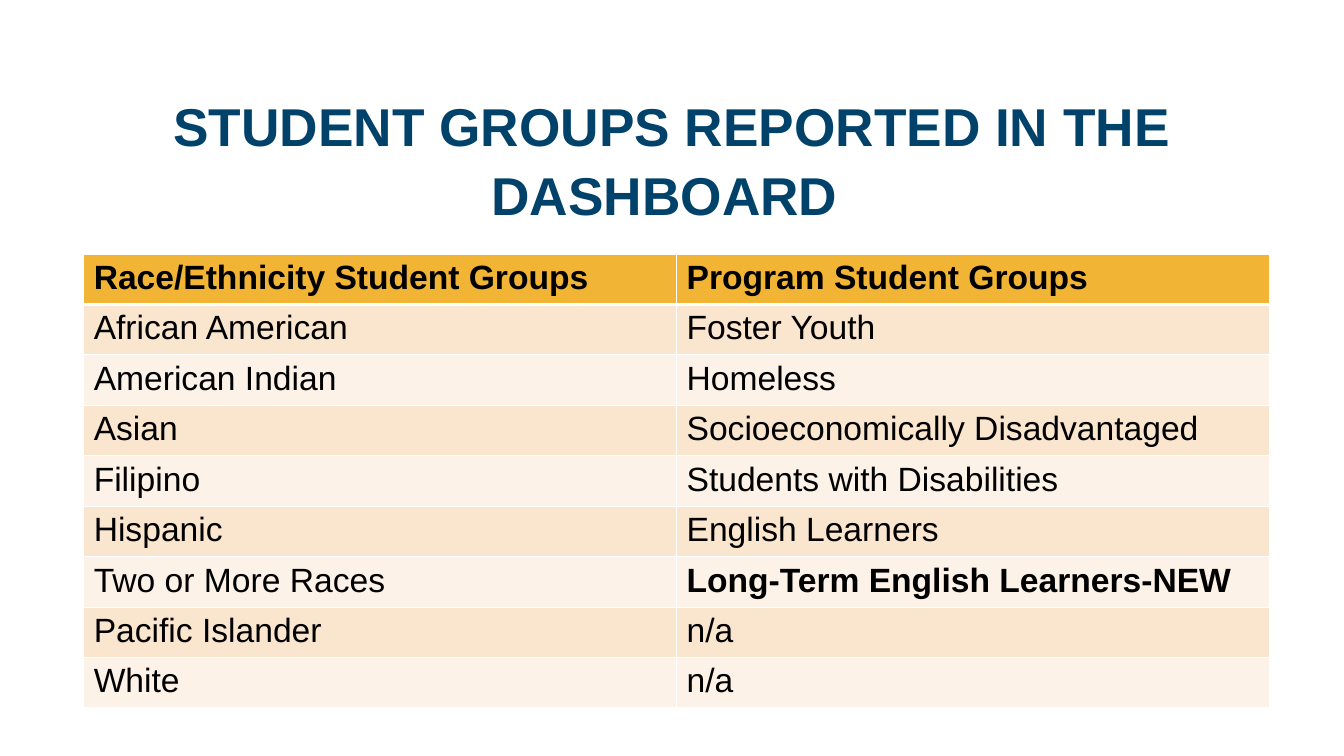
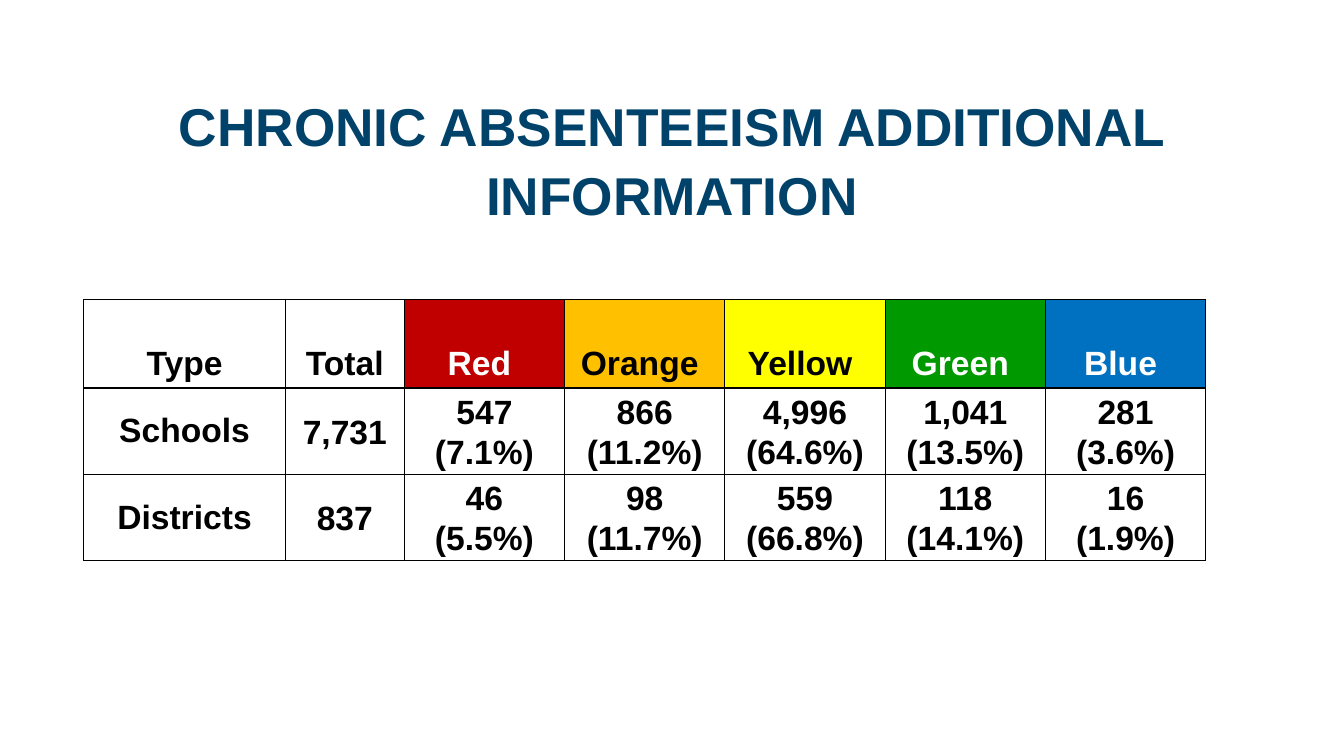
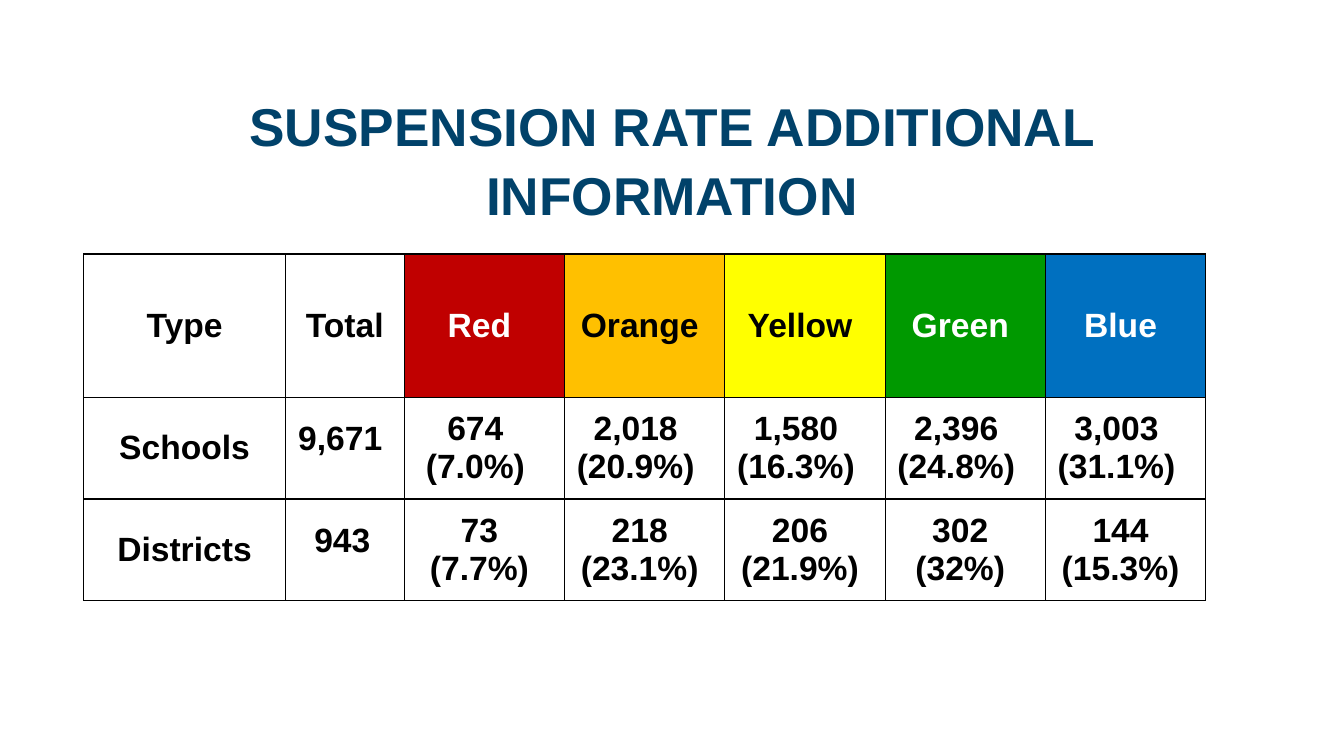
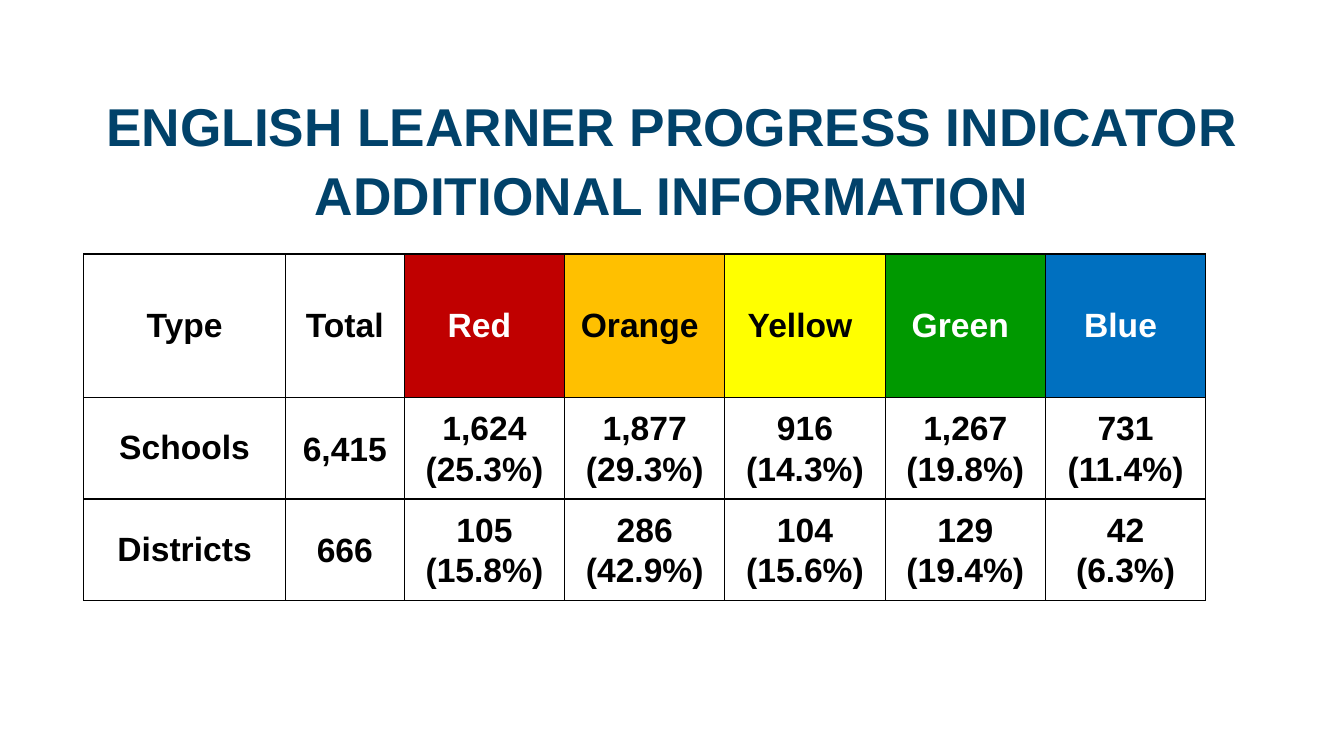
from dataclasses import dataclass

from lxml import etree
from pptx import Presentation
from pptx import util as u
from pptx.dml import color as dml
from pptx.enum import text as tx
from pptx.oxml import ns

MID = tx.MSO_ANCHOR.MIDDLE
LOW = tx.MSO_ANCHOR.BOTTOM
LEFT = tx.PP_ALIGN.LEFT
MAIN = tx.PP_ALIGN.CENTER


@dataclass(frozen=True)
class Theme:
    font: str = "Arial"
    head: float = 38
    body: float = 24
    lead: float = 48.8
    navy: str = "01426A"
    black: str = "000000"
    white: str = "FFFFFF"
    gold: str = "F1B434"
    bands: tuple[str, str] = ("FAE5CE", "FCF2E8")


@dataclass(frozen=True)
class Level:
    name: str
    fill: str
    ink: str


@dataclass(frozen=True)
class Rating:
    title: str
    top: float
    rows: tuple[float, float, float]
    data: tuple[tuple[str, ...], tuple[str, ...]]
    anchor: tx.MSO_ANCHOR = MID
    shifts: tuple[float, float] = (0, 0)
    edge: float = 0
    lead: float | None = 1.07
    total: float | u.Length = 1.07


T = Theme()
X = 0.83

LEVELS = (
    Level("Red", "C00000", T.white),
    Level("Orange", "FFC000", T.black),
    Level("Yellow", "FFFF00", T.black),
    Level("Green", "009900", T.white),
    Level("Blue", "0070C0", T.white),
)

GROUPS = (
    ("Race/Ethnicity Student Groups", "Program Student Groups"),
    ("African American", "Foster Youth"),
    ("American Indian", "Homeless"),
    ("Asian", "Socioeconomically Disadvantaged"),
    ("Filipino", "Students with Disabilities"),
    ("Hispanic", "English Learners"),
    ("Two or More Races", "Long-Term English Learners-NEW"),
    ("Pacific Islander", "n/a"),
    ("White", "n/a"),
)

RATINGS = (
    Rating(
        "CHRONIC ABSENTEEISM ADDITIONAL INFORMATION", 2.97, (0.88, 0.79, 0.79),
        (("7,731", "547\n(7.1%)", "866\n(11.2%)", "4,996\n(64.6%)",
          "1,041\n(13.5%)", "281\n(3.6%)"),
         ("837", "46\n(5.5%)", "98\n(11.7%)", "559\n(66.8%)",
          "118\n(14.1%)", "16\n(1.9%)")),
        anchor=LOW,
    ),
    Rating(
        "SUSPENSION RATE ADDITIONAL INFORMATION", 2.52, (1.42, 1.01, 1.01),
        (("9,671", "674\n(7.0%)", "2,018\n(20.9%)", "1,580\n(16.3%)",
          "2,396\n(24.8%)", "3,003\n(31.1%)"),
         ("943", "73\n(7.7%)", "218\n(23.1%)", "206\n(21.9%)",
          "302\n(32%)", "144\n(15.3%)")),
        shifts=(0.09, 0.05), edge=0.05, lead=None, total=u.Pt(13.8),
    ),
    Rating(
        "ENGLISH LEARNER PROGRESS INDICATOR ADDITIONAL INFORMATION", 2.52,
        (1.42, 1.01, 1.01),
        (("6,415", "1,624\n(25.3%)", "1,877\n(29.3%)", "916\n(14.3%)",
          "1,267\n(19.8%)", "731\n(11.4%)"),
         ("666", "105\n(15.8%)", "286\n(42.9%)", "104\n(15.6%)",
          "129\n(19.4%)", "42\n(6.3%)")),
    ),
)


def put(frame, text: str, *, size: float = T.body, ink: str = T.black,
        bold: bool = True, align=MAIN, lead=None, after: float = 0) -> None:
    para = frame.paragraphs[0]
    para.text = text
    para.alignment = align
    para.space_after = u.Pt(after)
    if lead is not None:
        para.line_spacing = lead
    for run in para.runs:
        run.font.name = T.font
        run.font.size = u.Pt(size)
        run.font.bold = bold
        run.font.color.rgb = dml.RGBColor.from_string(ink)


def start(deck, title: str):
    page = deck.slides.add_slide(deck.slide_layouts[6])
    box = page.shapes.add_textbox(
        u.Inches(X), u.Inches(0.8), u.Inches(11.67), u.Inches(1.49))
    box.text_frame.word_wrap = True
    box.text_frame.vertical_anchor = LOW
    put(box.text_frame, title, size=T.head, ink=T.navy, lead=u.Pt(T.lead))
    return page


def grid(page, top: float, cols: list[float], rows: list[float]):
    table = page.shapes.add_table(
        len(rows), len(cols), u.Inches(X), u.Inches(top),
        u.Inches(sum(cols)), u.Inches(sum(rows))).table
    table.first_row = False
    table.horz_banding = False
    for col, width in zip(table.columns, cols):
        col.width = u.Inches(width)
    for row, height in zip(table.rows, rows):
        row.height = u.Inches(height)
    return table


def paint(cell, fill: str | None, line: str, top: float = 1,
          base: float = 1) -> None:
    if fill:
        cell.fill.solid()
        cell.fill.fore_color.rgb = dml.RGBColor.from_string(fill)
    else:
        cell.fill.background()
    props = cell._tc.get_or_add_tcPr()
    sides = {"lnL": 1, "lnR": 1, "lnT": top, "lnB": base}
    for spot, (side, width) in enumerate(sides.items()):
        edge = etree.Element(ns.qn(f"a:{side}"), w=str(u.Pt(width)))
        solid = etree.SubElement(edge, ns.qn("a:solidFill"))
        etree.SubElement(solid, ns.qn("a:srgbClr"), val=line)
        props.insert(spot, edge)


def inset(cell, side: float, shift: float, edge: float) -> None:
    cell.margin_left = u.Inches(side - shift)
    cell.margin_right = u.Inches(side + shift)
    cell.margin_top = cell.margin_bottom = u.Inches(edge)


def groups(deck) -> None:
    page = start(deck, "STUDENT GROUPS REPORTED IN THE DASHBOARD ")
    table = grid(page, 2.52, [5.88] * 2, [0.47] * len(GROUPS))
    for r, pair in enumerate(GROUPS):
        fill = T.bands[(r - 1) % 2] if r else T.gold
        for c, text in enumerate(pair):
            cell = table.cell(r, c)
            paint(cell, fill, T.white, top=3 if r == 1 else 1,
                  base=1 if r else 3)
            put(cell.text_frame, text, align=LEFT,
                bold=r == 0 or text.endswith("NEW"))


def rating(deck, item: Rating) -> None:
    page = start(deck, item.title)
    table = grid(page, item.top, [2, 1.18] + [1.59] * len(LEVELS),
                 list(item.rows))
    plain = [Level(name, "", T.black) for name in ("Type", "Total")]
    for c, level in enumerate([*plain, *LEVELS]):
        cell = table.cell(0, c)
        cell.vertical_anchor = item.anchor
        paint(cell, level.fill, T.black)
        inset(cell, 0.1, 0.05 if level.fill else 0, 0.05)
        put(cell.text_frame, level.name, ink=level.ink)
    names = ("Schools", "Districts")
    for r, (name, data, shift) in enumerate(
            zip(names, item.data, item.shifts), 1):
        for c, text in enumerate((name, *data)):
            cell = table.cell(r, c)
            cell.vertical_anchor = MID
            paint(cell, None, T.black)
            if c == 0:
                put(cell.text_frame, text)
                continue
            inset(cell, 0.1 if shift else 0.07, shift / 2 if c == 1 else shift,
                  item.edge)
            put(cell.text_frame, text, after=8,
                lead=item.total if c == 1 else item.lead)


def main() -> None:
    deck = Presentation()
    deck.slide_width = u.Inches(13.33)
    deck.slide_height = u.Inches(7.5)
    groups(deck)
    for item in RATINGS:
        rating(deck, item)
    deck.save("out.pptx")


if __name__ == "__main__":
    main()
